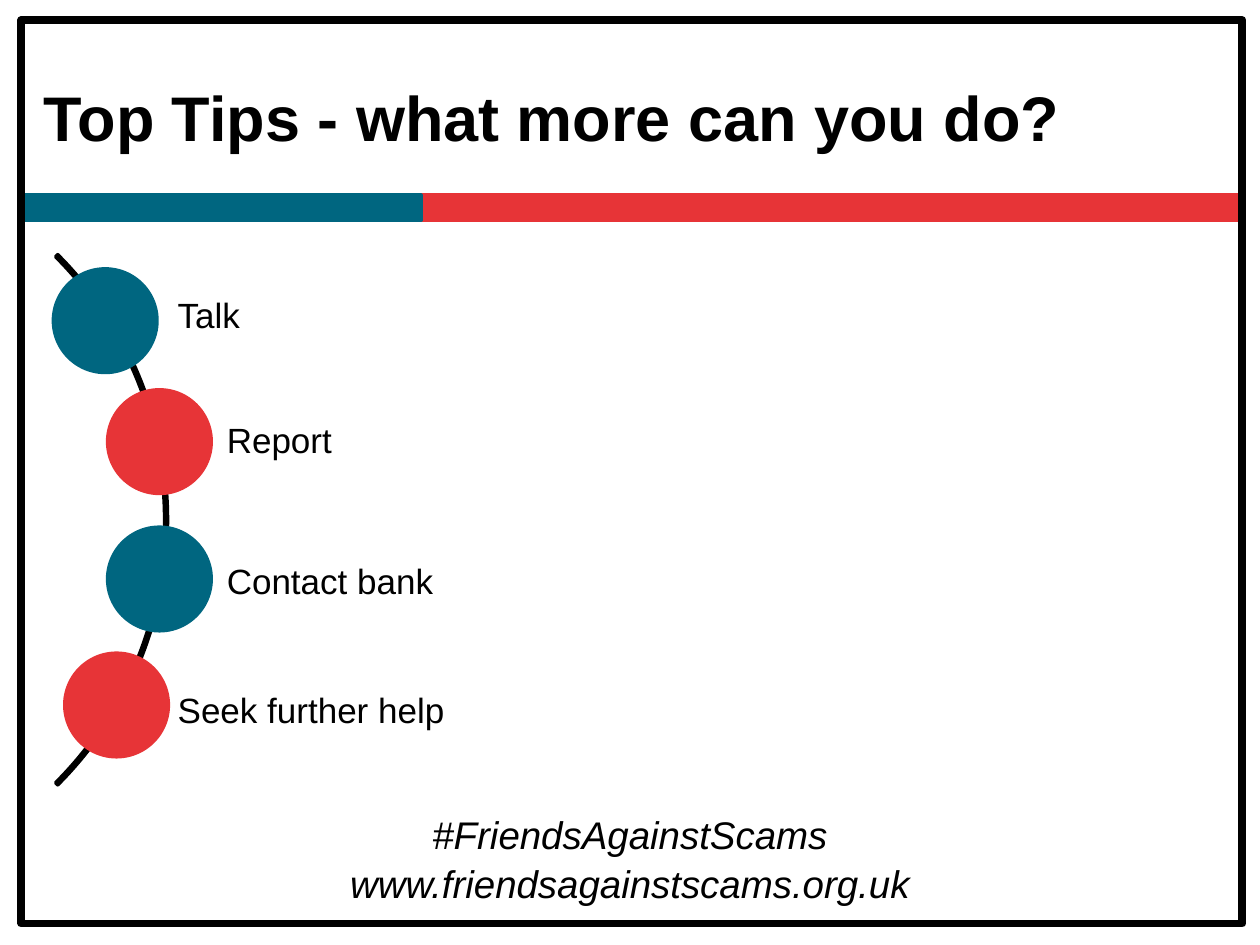
from pptx import Presentation
from pptx.dml.color import RGBColor
from pptx.enum.shapes import MSO_SHAPE
from pptx.enum.text import MSO_ANCHOR, PP_ALIGN
from pptx.util import Inches, Pt

RECT, OVAL, ARC = MSO_SHAPE.RECTANGLE, MSO_SHAPE.OVAL, MSO_SHAPE.BLOCK_ARC
TOP, MIDDLE = MSO_ANCHOR.TOP, MSO_ANCHOR.MIDDLE
LEFT, CENTER = PP_ALIGN.LEFT, PP_ALIGN.CENTER

COLORS = {"ink": "000000", "teal": "006680", "red": "E73437"}
TITLE = {"size": Pt(36), "bold": True}
LABEL = {"size": Pt(20)}
FOOT = {"size": Pt(22), "italic": True}
PAD = (0.1, 0.05, 0.1, 0.05)
TIP_PAD = (0.54, 0.06, 0.06, 0.06)
DOT = 0.85


class Deck:
    """Holds the style and the current slide."""

    def __init__(self):
        self.prs = Presentation()
        self.prs.slide_width = Inches(10)
        self.prs.slide_height = Inches(7.5)
        self.slide = self.prs.slides.add_slide(self.prs.slide_layouts[6])

    def color(self, name):
        return RGBColor.from_string(COLORS[name])

    def shape(self, kind, box, fill=None, line=None, width=2):
        item = self.slide.shapes.add_shape(kind, *map(Inches, box))
        item.shadow.inherit = False
        if fill:
            item.fill.solid()
            item.fill.fore_color.rgb = self.color(fill)
        else:
            item.fill.background()
        if line:
            item.line.color.rgb = self.color(line)
            item.line.width = Pt(width)
        else:
            item.line.fill.background()
        return item

    def text(self, words, box, style, align=LEFT, anchor=MIDDLE, pad=PAD, space=1.0):
        frame = self.slide.shapes.add_textbox(*map(Inches, box)).text_frame
        frame.word_wrap = True
        frame.vertical_anchor = anchor
        for side, gap in zip(("left", "top", "right", "bottom"), pad):
            setattr(frame, f"margin_{side}", Inches(gap))
        para = frame.paragraphs[0]
        para.alignment = align
        para.line_spacing = space
        run = para.add_run()
        run.text = words
        for key, value in {"name": "Arial", **style}.items():
            setattr(run.font, key, value)
        run.font.color.rgb = self.color("ink")

    def tip(self, words, fill, text_at, dot_at):
        left, top = text_at
        self.text(words, (left, top, 9.6 - left, 0.68), LABEL,
                  pad=TIP_PAD, space=0.9)
        self.shape(OVAL, (*dot_at, DOT, DOT), fill)


def main():
    deck = Deck()

    # Two-colour band, then the frame over its ends
    deck.shape(RECT, (0.42, 1.55, 9.44, 0.2), "red", "red")
    deck.shape(RECT, (0.17, 1.55, 3.17, 0.2), "teal", "teal")
    deck.shape(RECT, (0.17, 0.16, 9.69, 7.17), line="ink", width=4.5)

    # Footer lines
    for words, top in (("#FriendsAgainstScams", 6.39),
                       ("www.friendsagainstscams.org.uk", 6.78)):
        deck.text(words, (0, top, 10, 0.47), FOOT, CENTER, TOP)

    # Curve from 315 to 45 degrees behind the tips
    curve = deck.shape(ARC, (-4.62, 1.15, 5.95, 5.95), line="ink")
    for i, value in enumerate((189, 27, 0.004)):
        curve.adjustments[i] = value

    # Tips along the curve
    tips = (
        ("Talk", "teal", (0.87, 2.18), (0.41, 2.12)),
        ("Report", "red", (1.26, 3.17), (0.84, 3.08)),
        ("Contact bank", "teal", (1.26, 4.29), (0.84, 4.17)),
        ("Seek further help", "red", (0.87, 5.31), (0.5, 5.17)),
    )
    for tip in tips:
        deck.tip(*tip)

    # Title
    deck.text("Top Tips - what more can you do?", (0.25, 0.3, 9.42, 1.25), TITLE)

    deck.prs.save("out.pptx")


if __name__ == "__main__":
    main()
